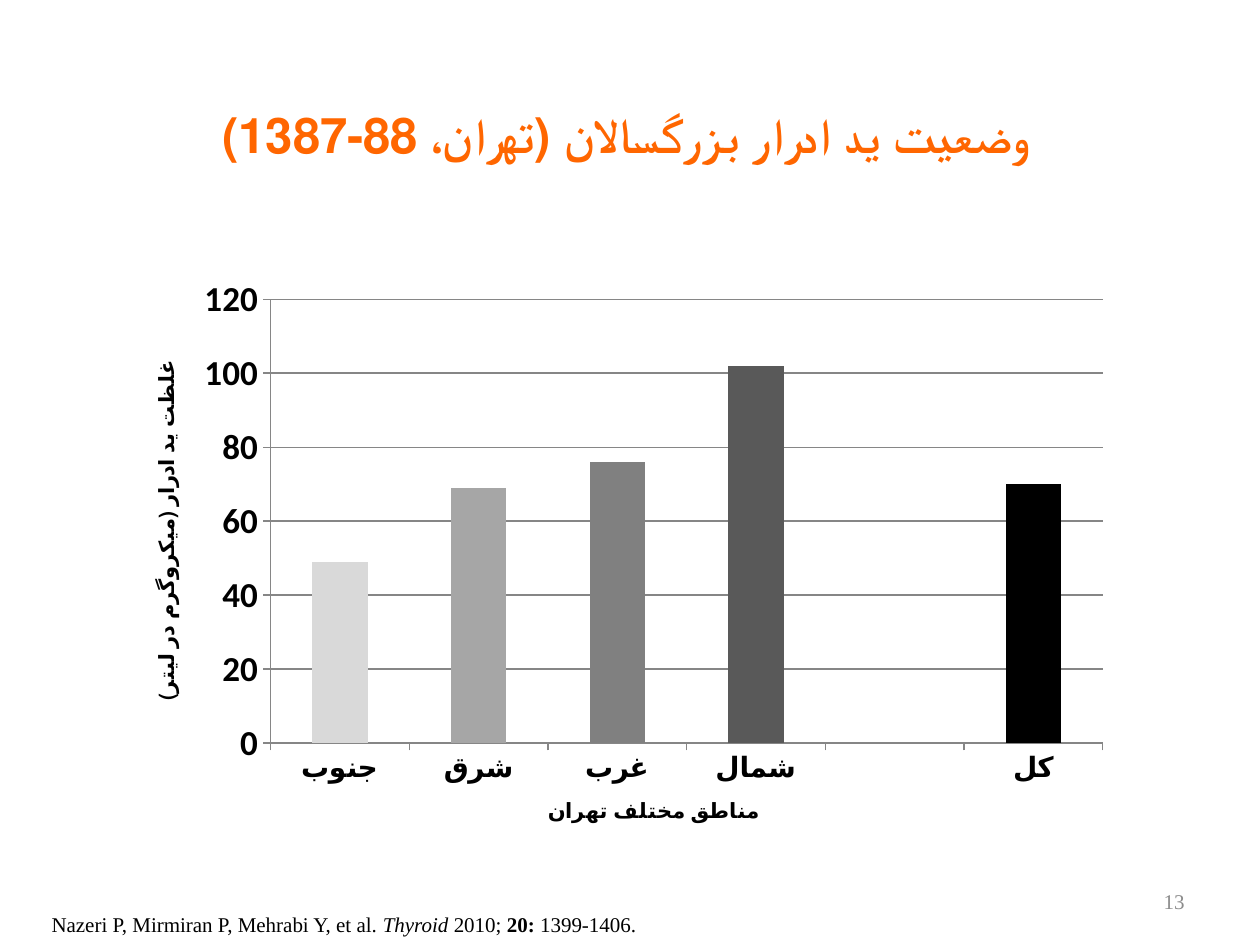
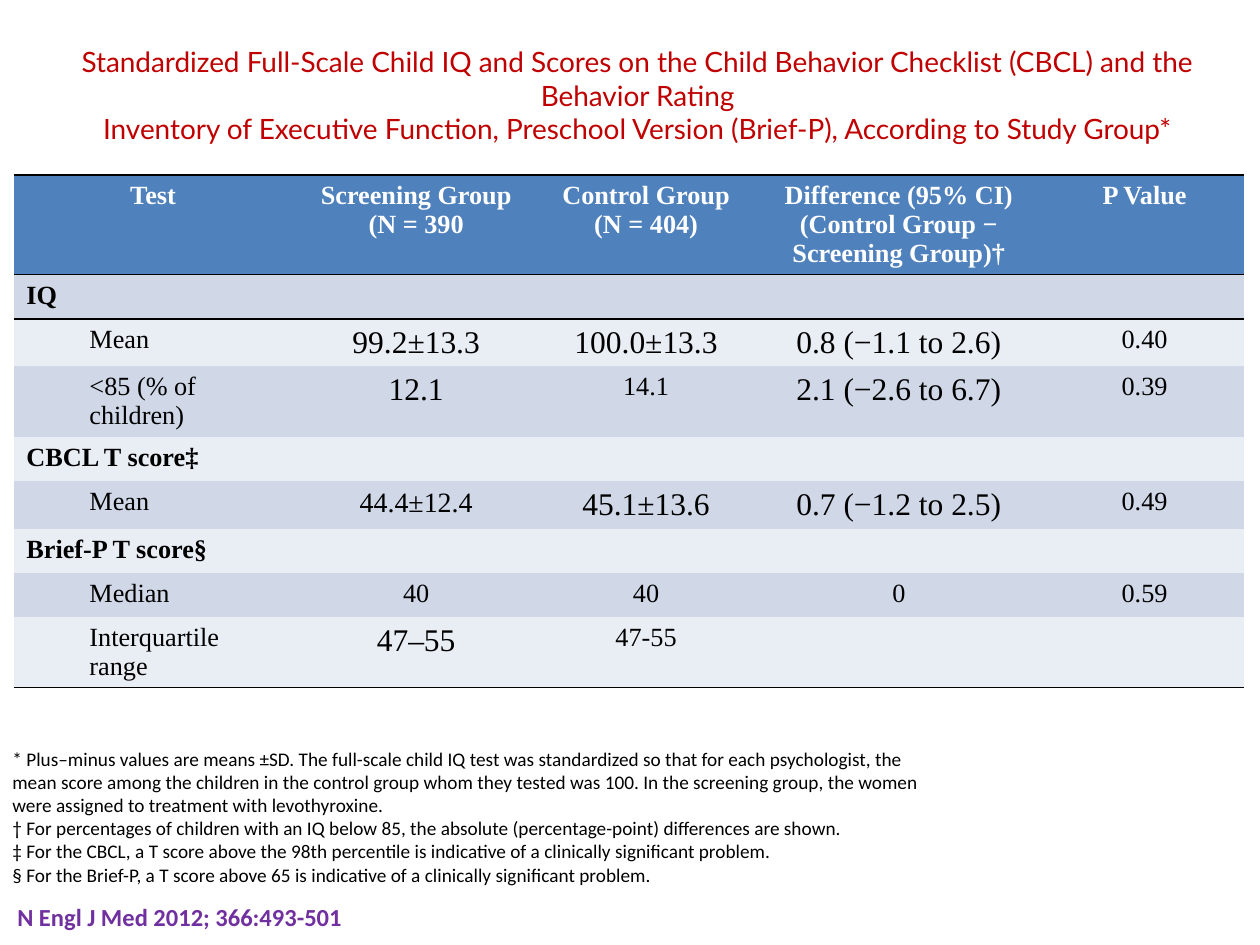
"""Build two slides on iodine status: a chart of urinary iodine and a table of child test scores."""
from lxml import etree
from pptx import Presentation
from pptx import util as u
from pptx.chart.data import CategoryChartData
from pptx.dml.color import RGBColor
from pptx.enum import chart as ch, text
from pptx.oxml import ns

BLACK = RGBColor(0x00, 0x00, 0x00)
WHITE = RGBColor(0xFF, 0xFF, 0xFF)
ORANGE = RGBColor(0xFF, 0x66, 0x00)
RED = RGBColor(0xC0, 0x00, 0x00)
PURPLE = RGBColor(0x70, 0x30, 0xA0)
PAGE_GREY = RGBColor(0x8C, 0x8C, 0x8C)
LINE_GREY = RGBColor(0x86, 0x86, 0x86)
BLUE = RGBColor(0x4F, 0x81, 0xBD)
BANDS = [RGBColor(0xE9, 0xED, 0xF4), RGBColor(0xD0, 0xD8, 0xE8)]
REGION_GREYS = {0: RGBColor(0xD9, 0xD9, 0xD9), 1: RGBColor(0xA6, 0xA6, 0xA6),
                2: RGBColor(0x80, 0x80, 0x80), 3: RGBColor(0x59, 0x59, 0x59), 5: BLACK}
SANS, SERIF, HEADING = "Calibri", "Times New Roman", "Lato"
ALIGN = text.PP_ALIGN


def style(font, size, color=BLACK, name=SANS, bold=False):
    font.size, font.name, font.bold = u.Pt(size), name, bold
    font.color.rgb = color


def add_text(slide, box, lines, size, color=BLACK, name=SANS, bold=False, align=ALIGN.LEFT):
    frame = slide.shapes.add_textbox(*map(u.Cm, box)).text_frame
    frame.word_wrap = True
    frame.text = lines
    for line in frame.paragraphs:
        line.alignment = align
        style(line.font, size, color, name, bold)
    return frame


prs = Presentation()
prs.slide_width, prs.slide_height = u.Cm(25.4), u.Cm(19.05)

iodine = prs.slides.add_slide(prs.slide_layouts[1])
unused_title = iodine.shapes.title.element
unused_title.getparent().remove(unused_title)
heading = iodine.placeholders[1]
heading.left, heading.top, heading.width, heading.height = map(u.Cm, (1.19, 1.98, 22.86, 15.09))
heading.text_frame.text = "وضعیت ید ادرار بزرگسالان (تهران، 88-1387)"
heading_line = heading.text_frame.paragraphs[0]
heading_line.alignment = ALIGN.CENTER
heading_props = heading_line._p.get_or_add_pPr()
heading_props.set("rtl", "1")
etree.SubElement(heading_props, ns.qn("a:buNone"))
style(heading_line.font, 28, ORANGE, SANS, True)

regions = CategoryChartData()
regions.categories = ["جنوب", "شرق", "غرب", "شمال", "", "کل"]
regions.add_series("Series 1", [49, 69, 76, 102, None, 70])
chart = iodine.shapes.add_chart(ch.XL_CHART_TYPE.COLUMN_CLUSTERED,
                                *map(u.Cm, (2.59, 5.36, 20.04, 11.76)), regions).chart
chart.has_legend = chart.has_title = False
style(chart.font, 10)
plot = chart.plots[0]
plot.vary_by_categories = False
plot.gap_width = 150
concentrations = plot.series[0]
concentrations.format.fill.solid()
concentrations.format.fill.fore_color.rgb = BLUE
for index, grey in REGION_GREYS.items():
    bar = concentrations.points[index].format.fill
    bar.solid()
    bar.fore_color.rgb = grey

for axis, caption, size, name, rotation in [
        (chart.category_axis, "مناطق مختلف تهران", 16, HEADING, "0"),
        (chart.value_axis, "غلظت ید ادرار (میکروگرم در لیتر)", 20, SANS, "-5400000")]:
    axis.major_tick_mark = ch.XL_TICK_MARK.OUTSIDE
    axis.format.line.color.rgb = LINE_GREY
    style(axis.tick_labels.font, size, BLACK, name, True)
    caption_frame = axis.axis_title.text_frame
    caption_frame.text = caption
    caption_frame._txBody.bodyPr.set("rot", rotation)
    caption_frame._txBody.bodyPr.set("vert", "horz")
    style(caption_frame.paragraphs[0].font, 12, BLACK, SANS, True)
chart.value_axis.minimum_scale, chart.value_axis.maximum_scale = 0, 120
chart.value_axis.major_unit = 20
chart.value_axis.major_gridlines.format.line.color.rgb = LINE_GREY

citation = add_text(iodine, (0.79, 18.26, 14.71, 0.76), "", 12, name=SERIF).paragraphs[0]
for words, italic, bold in [("Nazeri P, Mirmiran P, Mehrabi Y, et al. ", False, False),
                            ("Thyroid ", True, False), ("2010; ", False, False),
                            ("20: ", False, True), ("1399-1406.", False, False)]:
    part = citation.add_run()
    part.text = words
    part.font.italic, part.font.bold = italic, bold
page = add_text(iodine, (18.21, 17.65, 5.92, 1.02), "13", 12, PAGE_GREY, SERIF, align=ALIGN.RIGHT)
page.vertical_anchor = text.MSO_ANCHOR.MIDDLE

scores = prs.slides.add_slide(prs.slide_layouts[5])
title = scores.shapes.title
title.left, title.top, title.width, title.height = map(u.Cm, (0.89, 0.33, 23.93, 3.18))
title.text_frame.text = (
    "Standardized Full-Scale Child IQ and Scores on the Child Behavior Checklist (CBCL) and the "
    "Behavior Rating\vInventory of Executive Function, Preschool Version (Brief-P), "
    "According to Study Group*")
title.text_frame.vertical_anchor = text.MSO_ANCHOR.MIDDLE
title.text_frame.paragraphs[0].alignment = ALIGN.CENTER
style(title.text_frame.paragraphs[0].font, 16, RED, HEADING)

ROWS = [
    ["Test", "Screening Group\n(N = 390", "Control Group\n(N = 404)",
     "Difference (95% CI)\n(Control Group − Screening Group)†", "P Value"],
    ["IQ", "", "", "", ""],
    ["Mean", "99.2±13.3", "100.0±13.3", "0.8 (−1.1 to 2.6)", "0.40"],
    ["<85 (% of children)", "12.1", "14.1", "2.1 (−2.6 to 6.7)", "0.39"],
    ["CBCL T score‡", "", "", "", ""],
    ["Mean", "44.4±12.4", "45.1±13.6", "0.7 (−1.2 to 2.5)", "0.49"],
    ["Brief-P T score§", "", "", "", ""],
    ["Median", "40", "40", "0", "0.59"],
    ["Interquartile range", "47–55", "47-55", "", ""],
]
GROUP_ROWS = (1, 4, 6)
LARGE_SIZES = {(2, 1): 18, (2, 2): 18, (2, 3): 18, (3, 1): 18, (3, 3): 18,
               (5, 1): 16, (5, 2): 18, (5, 3): 18, (8, 1): 18}
EDGES = {0: ("a:lnT", "a:lnB"), 1: ("a:lnT",), 8: ("a:lnB",)}

score_frame = scores.shapes.add_table(9, 5, *map(u.Cm, (0.28, 3.53, 24.82, 10.8)))
table = score_frame.table
table._tbl.tblPr.find(ns.qn("a:tableStyleId")).text = "{2D5ABB26-0587-4C30-8999-92F81FD0307C}"
for column, width in zip(table.columns, (5.61, 5, 4.27, 5.92, 3.99)):
    column.width = u.Cm(width)
for row, height in zip(table.rows, (1.88, 0.89, 0.89, 1.32, 0.89, 0.89, 0.89, 0.89, 1.32)):
    row.height = u.Cm(height)

for r, entries in enumerate(ROWS):
    for c, entry in enumerate(entries):
        cell = table.cell(r, c)
        cell.text = entry
        for edge in EDGES.get(r, ()):
            border = etree.SubElement(cell._tc.get_or_add_tcPr(), ns.qn(edge), w=str(u.Pt(1)))
            ink = etree.SubElement(border, ns.qn("a:solidFill"))
            etree.SubElement(ink, ns.qn("a:srgbClr"), val=str(BLACK))
        cell.fill.solid()
        cell.fill.fore_color.rgb = BANDS[r % 2] if r else BLUE
        for line in cell.text_frame.paragraphs:
            size = LARGE_SIZES.get((r, c), 15)
            if r == 0 or c > 0:
                line.alignment = ALIGN.CENTER
            elif r not in GROUP_ROWS:
                line.level = 1
                line._p.get_or_add_pPr().set("marL", str(u.Cm(1.27)))
                line._p.get_or_add_pPr().set("indent", "0")
            style(line.font, size, BLACK if r else WHITE, SERIF, r == 0 or r in GROUP_ROWS)
            if not entry:
                line._p.get_or_add_endParaRPr().set("sz", str(size * 100))

add_text(scores, (0, 14.94, 25.3, 3.07), "\n".join([
    "* Plus–minus values are means ±SD. The full-scale child IQ test was standardized so that for each psychologist, the",
    "mean score among the children in the control group whom they tested was 100. In the screening group, the women",
    "were assigned to treatment with levothyroxine.",
    "† For percentages of children with an IQ below 85, the absolute (percentage-point) differences are shown.",
    "‡ For the CBCL, a T score above the 98th percentile is indicative of a clinically significant problem.",
    "§ For the Brief-P, a T score above 65 is indicative of a clinically significant problem.",
]), 11, align=ALIGN.JUSTIFY)
add_text(scores, (0.1, 18.06, 15.39, 0.86), "N Engl J Med 2012; 366:493-501", 14, PURPLE, bold=True)

prs.save("out.pptx")
